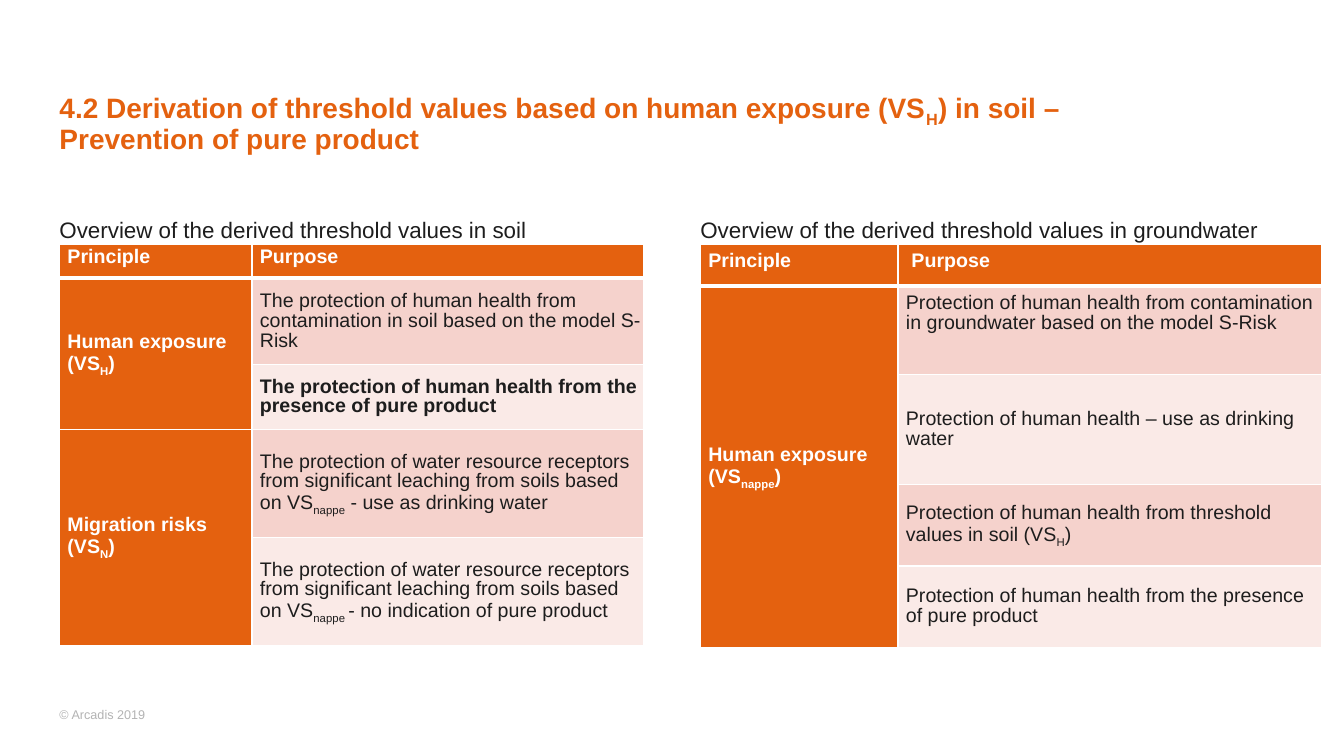
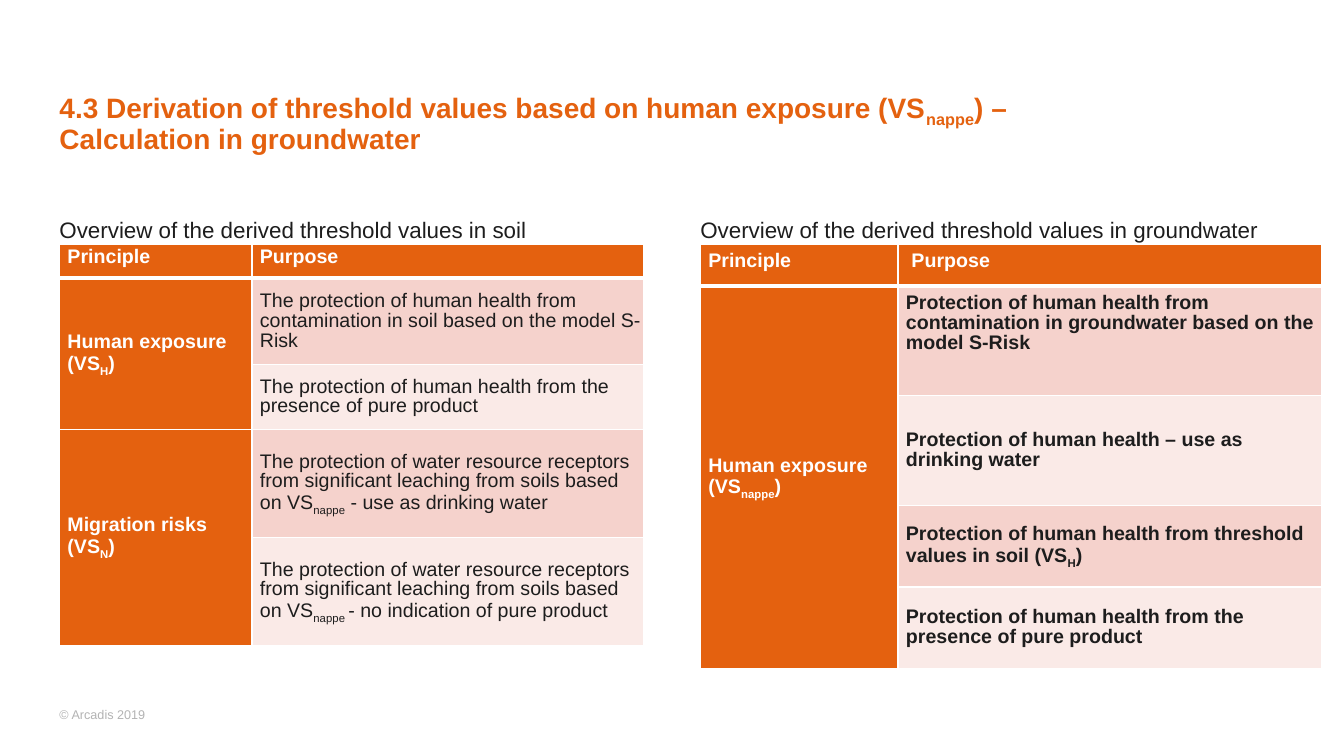
from dataclasses import dataclass

from lxml.etree import SubElement
from pptx import Presentation
from pptx.dml.color import RGBColor
from pptx.enum.text import MSO_ANCHOR
from pptx.oxml.ns import qn
from pptx.util import Cm, Pt


@dataclass(frozen=True)
class Theme:
    font: str = "Arial"
    brand: str = "E4610F"
    ink: str = "1D1D1D"
    white: str = "FFFFFF"
    grey: str = "B3B3B3"
    bands: tuple = ("F5D2CC", "FAEAE7")
    title: int = 20
    label: int = 16
    cell: int = 14
    foot: int = 9
    lead: float = 0.9    # line spacing
    thin: int = 1        # cell borders, points
    thick: int = 3
    pad: float = 0.2     # cell padding, cm


T = Theme()
LEFT, RIGHT = 1.5, 17.65
LABEL_Y, GRID_Y = 5.44, 6.17

# Table content: text between bars is subscript
LEACH = ("The protection of water resource receptors from significant "
         "leaching from soils based on VS|nappe")
SOIL = {
    "label": "Overview of the derived threshold values in soil",
    "left": LEFT, "cols": (4.85, 9.86),
    "rows": (0.84, 2.18, 1.63, 2.72, 2.72),
    "groups": (("Human exposure (VS|H|)", 2), ("Migration risks (VS|N|)", 2)),
    "items": (
        "The protection of human health from contamination in soil "
        "based on the model S-Risk",
        "The protection of human health from the presence of pure product",
        LEACH + "| - use as drinking water",
        LEACH + " |- no indication of pure product",
    ),
    "inset": T.pad, "first": MSO_ANCHOR.MIDDLE,
}
WATER = {
    "label": "Overview of the derived threshold values in groundwater",
    "left": RIGHT, "cols": (4.98, 10.67),
    "rows": (1.04, 2.22, 2.77, 2.06, 2.06),
    "groups": (("Human exposure (VS|nappe|)", 4),),
    "items": (
        "Protection of human health from contamination in groundwater "
        "based on the model S-Risk",
        "Protection of human health – use as drinking water",
        "Protection of human health from threshold values in soil (VS|H|)",
        "Protection of human health from the presence of pure product",
    ),
    "inset": 0.34, "first": MSO_ANCHOR.TOP,
}
# The bold first item needs a taller row
TALL = {**WATER, "rows": (1.04, 2.75, 2.77, 2.06, 2.06)}


def put(item, **values):
    """Set several attributes on one object."""
    for name, value in values.items():
        setattr(item, name, value)


def write(frame, text, size, color, bold=False, lead=1.0):
    """Fill a text frame, with subscripts and line breaks."""
    para = frame.paragraphs[0]
    para.line_spacing = lead
    for i, part in enumerate(text.split("|")):
        for j, line in enumerate(part.split("\n")):
            if j:
                para.add_line_break()
            run = para.add_run()
            run.text = line
            put(run.font, name=T.font, size=Pt(size), bold=bold)
            run.font.color.rgb = RGBColor.from_string(color)
            if i % 2:
                run._r.get_or_add_rPr().set("baseline", "-25000")


def label(slide, box, text, size, color, **look):
    """Add a text box without margins."""
    frame = slide.shapes.add_textbox(*map(Cm, box)).text_frame
    put(frame, word_wrap=True, margin_left=0, margin_top=0,
        margin_right=0, margin_bottom=0)
    write(frame, text, size, color, **look)


def edge(cell, top, base):
    """Draw white borders on the four sides of a cell."""
    props = cell._tc.get_or_add_tcPr()
    sides = {"L": T.thin, "R": T.thin, "T": top, "B": base}
    for side, width in sides.items():
        line = SubElement(props, qn(f"a:ln{side}"), w=str(Pt(width)))
        fill = SubElement(line, qn("a:solidFill"))
        SubElement(fill, qn("a:srgbClr"), val=T.white)


def fill_cell(cell, text, color, bold, left=T.pad, top=T.pad,
              anchor=MSO_ANCHOR.MIDDLE):
    put(cell, margin_left=Cm(left), margin_top=Cm(top), margin_right=0,
        margin_bottom=Cm(T.pad), vertical_anchor=anchor)
    write(cell.text_frame, text, T.cell, color, bold, T.lead)


def grid(slide, data, strong):
    """Add a labelled table; strong holds the indexes of bold items."""
    cols, rows = data["cols"], data["rows"]
    wide = sum(cols)
    label(slide, (data["left"], LABEL_Y, wide, 0.69), data["label"],
          T.label, T.ink)
    box = (data["left"], GRID_Y, wide, sum(rows))
    table = slide.shapes.add_table(len(rows), 2, *map(Cm, box)).table
    put(table, first_row=False, horz_banding=False)
    for col, width in zip(table.columns, cols):
        col.width = Cm(width)
    for row, height in zip(table.rows, rows):
        row.height = Cm(height)

    # Borders and fills
    for r in range(len(rows)):
        for c in range(2):
            cell = table.cell(r, c)
            edge(cell, T.thick if r == 1 else T.thin,
                 T.thin if r else T.thick)
            cell.fill.solid()
            tint = T.bands[(r - 1) % 2] if r and c else T.brand
            cell.fill.fore_color.rgb = RGBColor.from_string(tint)

    # Header row
    heads = (("Principle", T.pad), ("Purpose", data["inset"]))
    for c, (text, inset) in enumerate(heads):
        fill_cell(table.cell(0, c), text, T.white, True, inset, 0)

    # Merged groups on the left, items on the right
    start = 1
    for text, count in data["groups"]:
        cell = table.cell(start, 0)
        cell.merge(table.cell(start + count - 1, 0))
        fill_cell(cell, text, T.white, True)
        start += count
    for i, text in enumerate(data["items"]):
        anchor = MSO_ANCHOR.MIDDLE if i else data["first"]
        fill_cell(table.cell(i + 1, 1), text, T.ink, i in strong,
                  anchor=anchor)


def page(deck, title, grids):
    """Add a slide with its title, tables and footer."""
    slide = deck.slides.add_slide(deck.slide_layouts[6])
    label(slide, (LEFT, 2.29, 30.78, 1.4), title, T.title, T.brand,
          bold=True, lead=T.lead)
    for data, strong in grids:
        grid(slide, data, strong)
    label(slide, (LEFT, 17.81, 9.8, 0.38), "© Arcadis 2019", T.foot, T.grey)


def main():
    deck = Presentation()
    put(deck, slide_width=Cm(33.87), slide_height=Cm(19.05))
    lead = "Derivation of threshold values based on human exposure"
    page(deck, f"4.2 {lead} (VS|H|) in soil –\nPrevention of pure product",
         ((SOIL, {1}), (WATER, ())))
    page(deck, f"4.3 {lead} (VS|nappe|) –\nCalculation in groundwater",
         ((SOIL, ()), (TALL, range(4))))
    deck.save("out.pptx")


if __name__ == "__main__":
    main()
